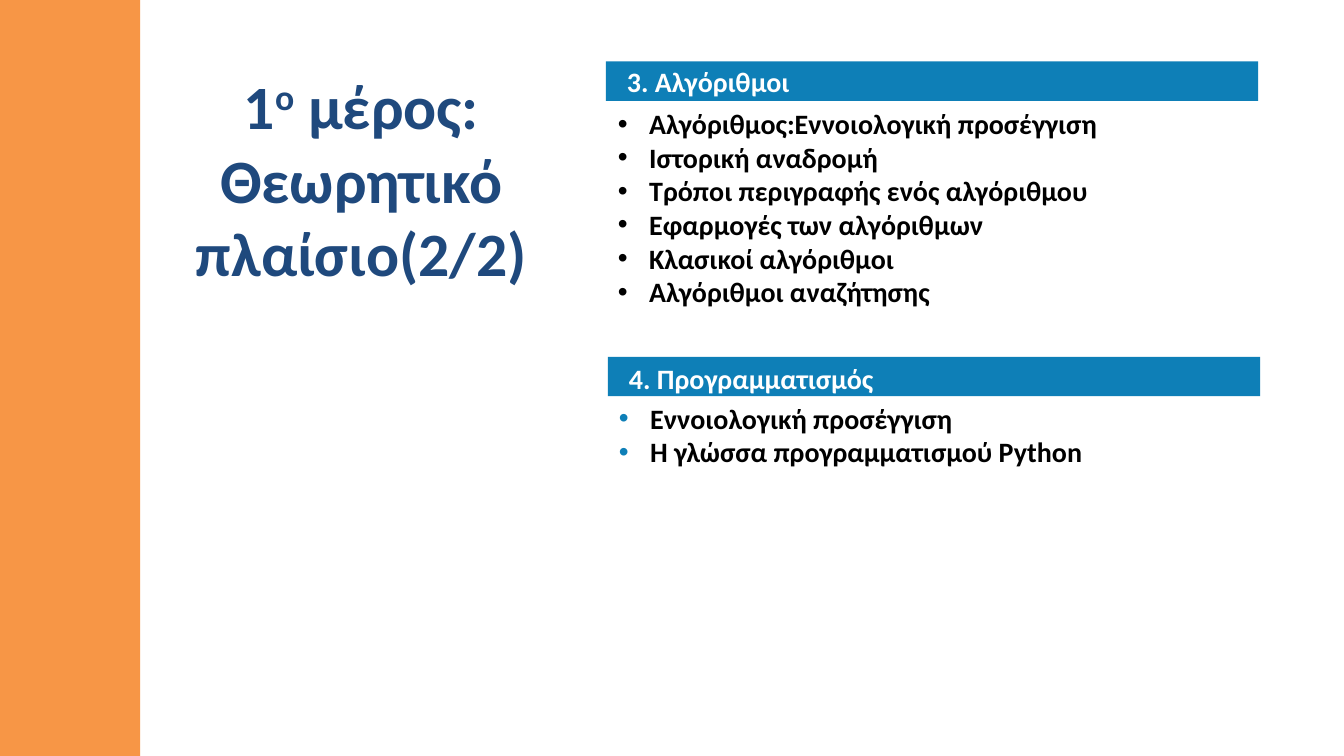
from dataclasses import dataclass

from lxml.etree import SubElement
from pptx import Presentation
from pptx.dml.color import RGBColor
from pptx.enum.shapes import MSO_SHAPE as Shape
from pptx.enum.text import MSO_ANCHOR as Anchor, PP_ALIGN as Align
from pptx.oxml.ns import qn
from pptx.util import Inches, Pt


@dataclass(frozen=True)
class Theme:
    font: str = "Calibri"
    orange: str = "F79646"
    blue: str = "0E7FB7"
    navy: str = "1F497D"
    black: str = "000000"
    white: str = "FFFFFF"
    title_size: int = 44
    body_size: int = 20


THEME = Theme()

TITLE = [[("1", 0), ("ο", 30), (" μέρος:", 0)], [("Θεωρητικό πλαίσιο(2/2)", 0)]]

# Each section: heading, bar place, heading box, list box, bullet colour, items
SECTIONS = [
    ("3. Αλγόριθμοι", (6.01, 0.61), (6.12, 0.65, 3.62, 0.31),
     (6.03, 1.01, 6.28, 2.46), THEME.black,
     ["Αλγόριθμος:Εννοιολογική προσέγγιση",
      "Ιστορική αναδρομή",
      "Τρόποι περιγραφής ενός αλγόριθμου",
      "Εφαρμογές των αλγόριθμων",
      "Κλασικοί αλγόριθμοι",
      "Αλγόριθμοι αναζήτησης"]),
    ("4. Προγραμματισμός", (6.03, 3.54), (6.14, 3.6, 4.5, 0.31),
     (6.04, 3.93, 6.28, 1.38), THEME.blue,
     ["Εννοιολογική προσέγγιση",
      "H γλώσσα προγραμματισμού Python"]),
]
BAR_SIZE = (6.47, 0.39)


def add_block(page, place, color):
    """Draw a plain filled rectangle."""
    block = page.shapes.add_shape(Shape.RECTANGLE, *map(Inches, place))
    block.shadow.inherit = False
    block.fill.solid()
    block.fill.fore_color.rgb = RGBColor.from_string(color)
    block.line.fill.background()


def add_span(para, text, size, color, baseline=0):
    span = para.add_run()
    span.text = text
    font_format = {"name": THEME.font, "size": Pt(size), "bold": True}
    for name, value in font_format.items():
        setattr(span.font, name, value)
    span.font.color.rgb = RGBColor.from_string(color)
    if baseline:
        span.font._element.set("baseline", str(baseline * 1000))


def add_bullet(para, color):
    """Give a paragraph a hanging round bullet."""
    props = para._p.get_or_add_pPr()
    indent = Inches(0.31)
    for name, value in {"marL": indent, "indent": -indent}.items():
        props.set(name, str(value))
    bullet_color = SubElement(props, qn("a:buClr"))
    SubElement(bullet_color, qn("a:srgbClr"), val=color)
    SubElement(props, qn("a:buFont"), typeface="Arial")
    SubElement(props, qn("a:buChar"), char="•")


def add_text(page, place, lines, size, color, anchor=Anchor.TOP,
             bullet=None, **para_format):
    """Add a text box; each line is a list of (text, baseline) spans."""
    frame = page.shapes.add_textbox(*map(Inches, place)).text_frame
    for name, value in {"word_wrap": True, "vertical_anchor": anchor}.items():
        setattr(frame, name, value)
    for number, spans in enumerate(lines):
        para = frame.add_paragraph() if number else frame.paragraphs[0]
        for name, value in para_format.items():
            setattr(para, name, value)
        if bullet:
            add_bullet(para, bullet)
        for text, baseline in spans:
            add_span(para, text, size, color, baseline)


def add_section(page, heading, bar_place, heading_place, list_place, bullet, items):
    """Add a heading bar with its bulleted list."""
    add_block(page, bar_place + BAR_SIZE, THEME.blue)
    add_text(page, heading_place, [[(heading, 0)]], THEME.body_size, THEME.white,
             Anchor.MIDDLE, space_before=Pt(4))
    add_text(page, list_place, [[(item, 0)] for item in items],
             THEME.body_size, THEME.black, bullet=bullet)


def main():
    deck = Presentation()
    deck.slide_width, deck.slide_height = Inches(13.33), Inches(7.5)
    page = deck.slides.add_slide(deck.slide_layouts[6])

    # Side band and title
    add_block(page, (0, 0, 1.39, 7.5), THEME.orange)
    add_text(page, (1.29, 0.61, 4.59, 2.32), TITLE, THEME.title_size, THEME.navy,
             Anchor.MIDDLE, alignment=Align.CENTER)

    # Topic sections
    for section in SECTIONS:
        add_section(page, *section)

    deck.save("out.pptx")


if __name__ == "__main__":
    main()
